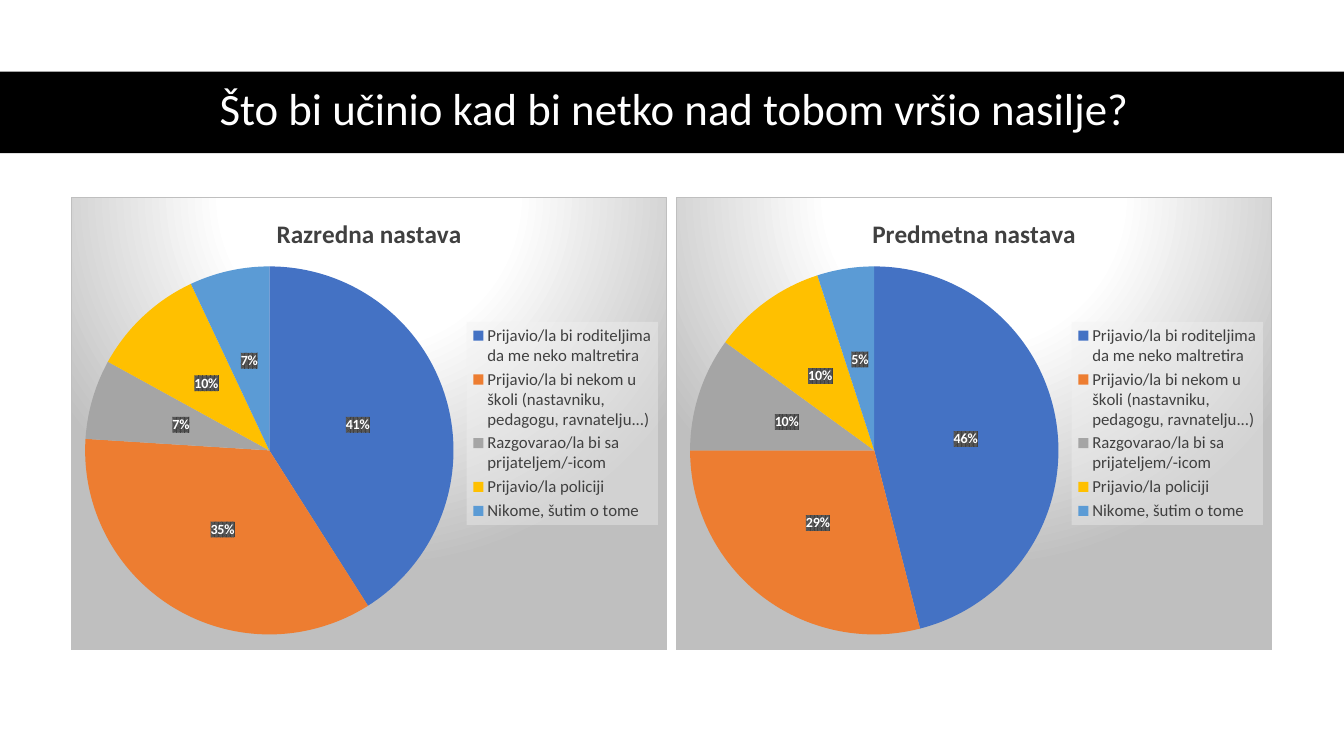
from lxml import etree
from pptx import Presentation
from pptx.chart.data import CategoryChartData
from pptx.dml.color import RGBColor
from pptx.enum import chart as ch, shapes, text
from pptx.oxml import ns
from pptx.util import Inches, Pt

TITLE = "Što bi učinio kad bi netko nad tobom vršio nasilje? "
ANSWERS = [
    "Prijavio/la bi roditeljima da me neko maltretira",
    "Prijavio/la bi nekom u školi (nastavniku, pedagogu, ravnatelju...)",
    "Razgovarao/la bi sa prijateljem/-icom",
    "Prijavio/la policiji",
    "Nikome, šutim o tome",
]
PIES = [
    ("Razredna nastava", [41, 35, 7, 10, 7]),
    ("Predmetna nastava", [46, 29, 10, 10, 5]),
]
SLICE_COLORS = ["4472C4", "ED7D31", "A5A5A5", "FFC000", "5B9BD5"]
FONT = "Calibri"
LEFT, TOP, WIDTH, HEIGHT, STEP = 0.7, 1.95, 5.92, 4.5, 6
PIE_BOX = (0.14, 0.69, 3.66, 3.66)
LEGEND_BOX = (3.93, 1.24, 1.9, 2.02)

BACKDROP = """<a:gradFill><a:gsLst>
<a:gs pos="0"><a:srgbClr val="FFFFFF"/></a:gs>
<a:gs pos="39000"><a:srgbClr val="FFFFFF"/></a:gs>
<a:gs pos="100000"><a:srgbClr val="BFBFBF"/></a:gs></a:gsLst>
<a:path path="circle"><a:fillToRect l="50000" t="-80000" r="50000" b="180000"/></a:path>
</a:gradFill><a:ln w="9525"><a:solidFill><a:srgbClr val="BFBFBF"/></a:solidFill></a:ln>"""
LEGEND_FILL = """<a:solidFill><a:srgbClr val="F2F2F2"><a:alpha val="39000"/></a:srgbClr></a:solidFill>
<a:ln><a:noFill/></a:ln>"""
LABEL_FILL = """<a:pattFill prst="pct75"><a:fgClr><a:srgbClr val="404040"/></a:fgClr>
<a:bgClr><a:srgbClr val="595959"/></a:bgClr></a:pattFill><a:ln><a:noFill/></a:ln>"""


def rgb(value):
    return RGBColor.from_string(value)


def set_font(font, size, color, bold=False):
    font.name, font.size, font.bold = FONT, Pt(size), bold
    font.color.rgb = rgb(color)


def chart_xml(tag, body):
    return etree.fromstring(f"<c:{tag} {ns.nsdecls('c', 'a')}>{body}</c:{tag}>")


def layout_xml(box, inner=False):
    target = '<c:layoutTarget val="inner"/>' if inner else ""
    modes = "".join(f'<c:{k}Mode val="edge"/>' for k in "xy")
    shares = [v / whole for v, whole in zip(box, (WIDTH, HEIGHT) * 2)]
    sizes = "".join(f'<c:{k} val="{v:.4f}"/>' for k, v in zip("xywh", shares))
    return chart_xml("layout", f"<c:manualLayout>{target}{modes}{sizes}</c:manualLayout>")


def clear_layout(element):
    for old in element.findall(ns.qn("c:layout")):
        element.remove(old)


def add_pie(s, index, title, values):
    data = CategoryChartData()
    data.categories = ANSWERS
    data.add_series("Series 1", values)
    chart = s.shapes.add_chart(
        ch.XL_CHART_TYPE.PIE, Inches(LEFT + index * STEP), Inches(TOP),
        Inches(WIDTH), Inches(HEIGHT), data).chart
    set_font(chart.font, 10, "000000")
    space = chart._chartSpace
    space.find(ns.qn("c:chart")).addnext(chart_xml("spPr", BACKDROP))

    chart.has_title = True
    tf = chart.chart_title.text_frame
    tf.text = title
    set_font(tf.paragraphs[0].runs[0].font, 18, "404040", True)
    chart.chart_title.include_in_layout = False

    plot = chart.plots[0]
    plot.vary_by_categories = True
    for point, color in enumerate(SLICE_COLORS):
        fill = plot.series[0].points[point].format.fill
        fill.solid()
        fill.fore_color.rgb = rgb(color)
    labels = plot.series[0].data_labels
    labels.show_percentage, labels.show_value = True, False
    labels.number_format, labels.number_format_is_linked = "0%", False
    labels.position = ch.XL_LABEL_POSITION.CENTER
    set_font(labels.font, 10, "FFFFFF", True)
    labels._element.find(ns.qn("c:txPr")).addprevious(chart_xml("spPr", LABEL_FILL))

    area = space.find(".//" + ns.qn("c:plotArea"))
    clear_layout(area)
    area.insert(0, layout_xml(PIE_BOX, inner=True))

    chart.has_legend = True
    legend = chart.legend
    legend.position = ch.XL_LEGEND_POSITION.RIGHT
    legend.include_in_layout = False
    set_font(legend.font, 12, "404040")
    element = legend._element
    clear_layout(element)
    element.find(ns.qn("c:legendPos")).addnext(layout_xml(LEGEND_BOX))
    element.find(ns.qn("c:txPr")).addprevious(chart_xml("spPr", LEGEND_FILL))


def main():
    prs = Presentation()
    prs.slide_width, prs.slide_height = Inches(13.33), Inches(7.5)
    s = prs.slides.add_slide(prs.slide_layouts[5])

    bar = s.shapes.add_shape(
        shapes.MSO_SHAPE.RECTANGLE, 0, Inches(0.71), prs.slide_width, Inches(0.81))
    bar.shadow.inherit = False
    bar.fill.solid()
    bar.fill.fore_color.rgb = rgb("000000")
    bar.line.fill.background()
    s.shapes._spTree.insert(2, bar._element)

    sp = s.shapes.title
    sp.left, sp.top, sp.width, sp.height = map(Inches, (0.61, 0.7, 12.26, 0.81))
    tf = sp.text_frame
    tf.text = TITLE
    tf.vertical_anchor = text.MSO_ANCHOR.MIDDLE
    p = tf.paragraphs[0]
    p.alignment, p.line_spacing = text.PP_ALIGN.CENTER, 0.9
    set_font(p.runs[0].font, 32, "FFFFFF")

    for index, (title, values) in enumerate(PIES):
        add_pie(s, index, title, values)
    prs.save("out.pptx")


if __name__ == "__main__":
    main()
